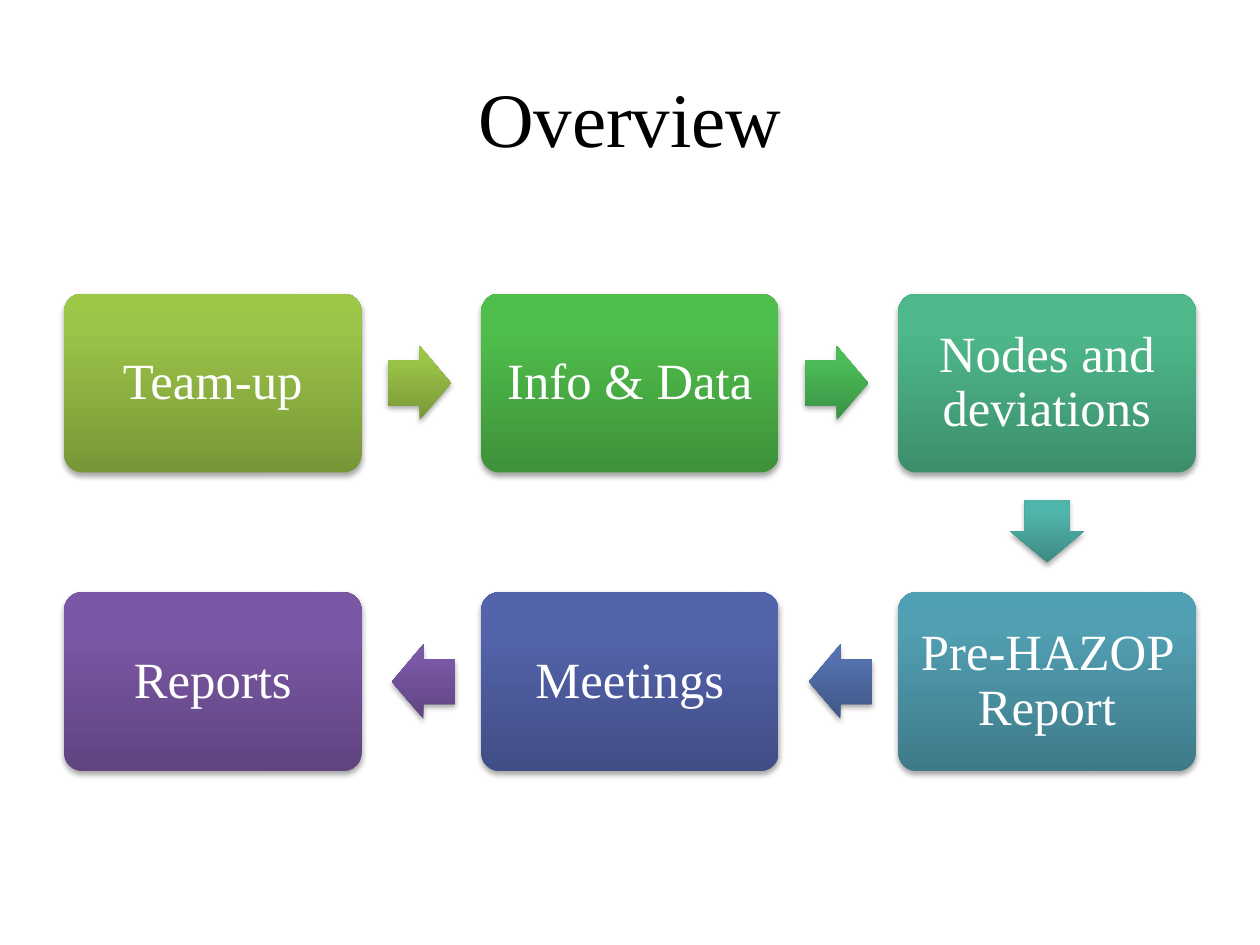
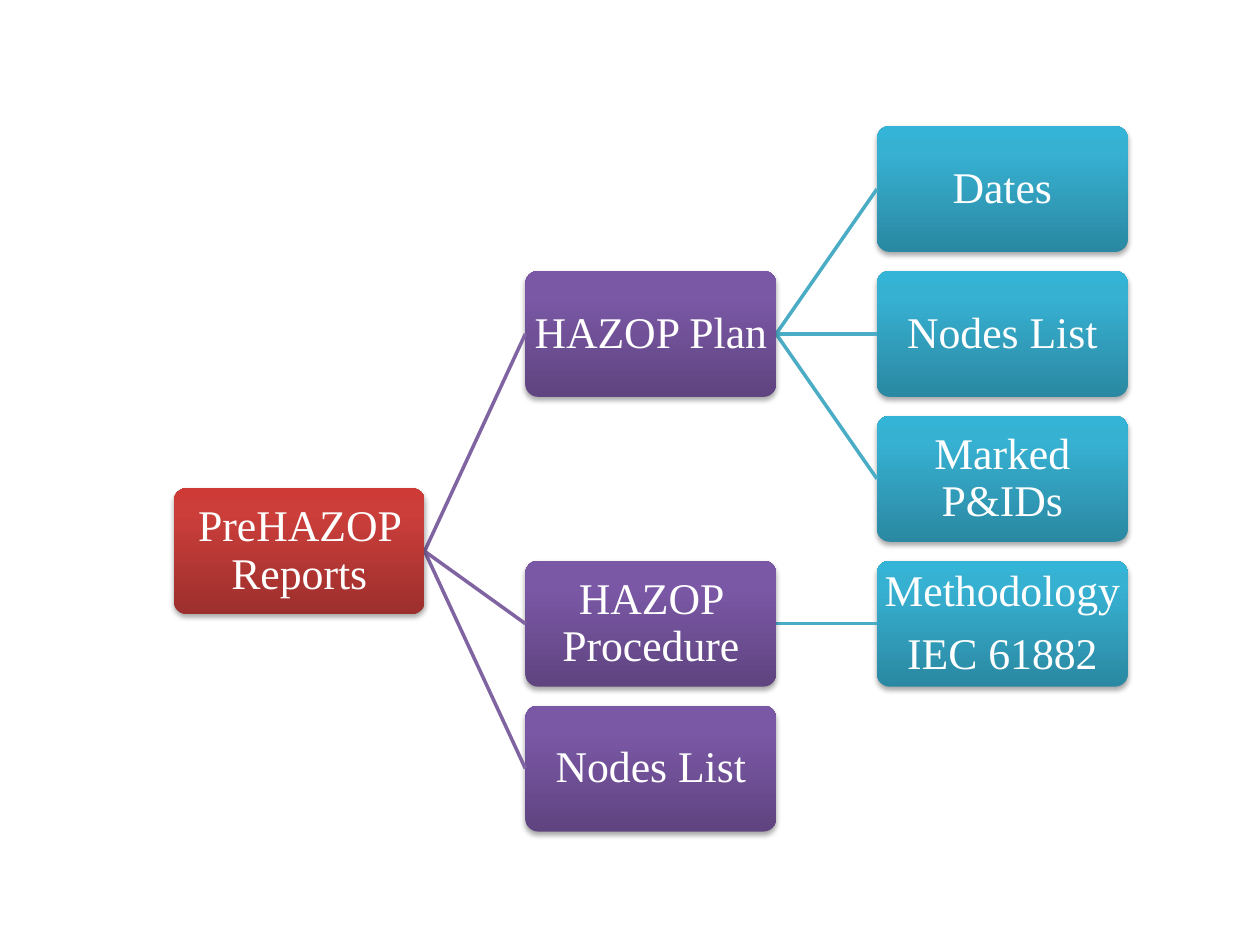
import pptx
import pptx.util
import pptx.dml.color
import pptx.enum.shapes
import pptx.enum.text
import pptx.oxml
import pptx.oxml.ns

# Content: each step is text, column, row, hue
STEPS = [
    ("Team-up", 0, 0, "lime"),
    ("Info & Data", 1, 0, "green"),
    ("Nodes and deviations", 2, 0, "jade"),
    ("Pre-HAZOP Report", 2, 1, "sea"),
    ("Meetings", 1, 1, "blue"),
    ("Reports", 0, 1, "violet"),
]
ARROWS = ["lime", "leaf", "teal", "steel", "violet"]  # between steps

# Each node is text and child nodes
TREE = ("PreHAZOP\u0020Reports", [
    ("HAZOP Plan", [("Dates", []), ("Nodes List", []), ("Marked P&IDs", [])]),
    ("HAZOP Procedure", [("Methodology\nIEC 61882", [])]),
    ("Nodes List", []),
])
LEVELS = ["red", "violet", "cyan"]

# Shared style
FONT = "Times New Roman"
COLORS = {"text": "000000", "label": "FFFFFF", "violet": "8064A2", "cyan": "4BACC6"}
HUES = {  # bottom, near the top, top
    "lime": ("779737", "9BC348", "9DC746"),
    "green": ("3E923A", "50BE4B", "4FC149"),
    "leaf": ("3A9144", "4CBC58", "4ABF57"),
    "jade": ("3C8E6B", "4EB88B", "4CBB8C"),
    "teal": ("3D8B83", "50B5AA", "4EB8AC"),
    "sea": ("3F7A89", "519FB2", "50A0B5"),
    "steel": ("405786", "5471AE", "5271B0"),
    "blue": ("414D85", "5464AC", "5363AF"),
    "violet": ("5F4480", "7B58A6", "7C57A8"),
    "red": ("9C2F2D", "CB3E3A", "CE3B37"),
    "cyan": ("2A88A2", "37B1D2", "34B4D6"),
}
STOPS = (0, 80, 100)

# Grids, in inches
FLOW = {"left": 0.51, "top": 2.33, "dx": 3.31, "dy": 2.37, "w": 2.36, "h": 1.42}
PLAN = {"left": 1.38, "top": 1, "dx": 2.79, "dy": 1.15, "w": 1.99, "h": 1}
ARROW_W, ARROW_H = 0.5, 0.59

INCH = pptx.util.Inches
SHAPE = pptx.enum.shapes.MSO_SHAPE
NS = pptx.oxml.ns.nsdecls("a")


def rgb(name):
    return pptx.dml.color.RGBColor.from_string(COLORS[name])


def write(frame, text, size, color, pad):
    frame.word_wrap = True
    frame.vertical_anchor = pptx.enum.text.MSO_ANCHOR.MIDDLE
    frame.margin_left = frame.margin_right = INCH(pad)
    frame.margin_top = frame.margin_bottom = INCH(pad)
    frame.text = text
    for para in frame.paragraphs:
        para.alignment = pptx.enum.text.PP_ALIGN.CENTER
        para.font.name = FONT
        para.font.size = pptx.util.Pt(size)
        para.font.color.rgb = rgb(color)


def add_solid(slide, kind, x, y, w, h, hue):
    """Shape with a vertical three-stop gradient and a soft shadow."""
    shape = slide.shapes.add_shape(kind, INCH(x), INCH(y), INCH(w), INCH(h))
    shape.line.fill.background()
    shape.fill.gradient()
    shape.fill.gradient_angle = 90
    grad = shape._element.spPr.find(pptx.oxml.ns.qn("a:gradFill"))
    grad.set("rotWithShape", "0")
    stops = grad.find(pptx.oxml.ns.qn("a:gsLst"))
    for stop in list(stops):
        stops.remove(stop)
    for pos, color in zip(STOPS, HUES[hue]):
        stops.append(pptx.oxml.parse_xml(
            f'<a:gs {NS} pos="{pos * 1000}"><a:srgbClr val="{color}"/></a:gs>'))
    shape.shadow.inherit = False
    effects = shape._element.spPr.find(pptx.oxml.ns.qn("a:effectLst"))
    effects.append(pptx.oxml.parse_xml(
        f'<a:outerShdw {NS} blurRad="40000" dist="23000" dir="5400000" rotWithShape="0">'
        '<a:srgbClr val="000000"><a:alpha val="35000"/></a:srgbClr></a:outerShdw>'))
    return shape


def add_box(slide, grid, col, row, text, hue, size, pad):
    x, y = grid["left"] + col * grid["dx"], grid["top"] + row * grid["dy"]
    box = add_solid(slide, SHAPE.ROUNDED_RECTANGLE, x, y, grid["w"], grid["h"], hue)
    box.adjustments[0] = 0.1
    write(box.text_frame, text, size, "label", pad)
    for para in box.text_frame.paragraphs:
        para.line_spacing = 0.9
        para.space_after = pptx.util.Pt(0.35 * size)


def center(grid, col, row):
    return (grid["left"] + col * grid["dx"] + grid["w"] / 2,
            grid["top"] + row * grid["dy"] + grid["h"] / 2)


def add_arrow(slide, start, end, hue):
    """Block arrow midway between two neighbouring steps."""
    (x1, y1), (x2, y2) = center(FLOW, *start), center(FLOW, *end)
    across, down = end[0] - start[0], end[1] - start[1]
    x = (x1 + x2) / 2 - 0.015 * across
    y = (y1 + y2) / 2 - 0.01 * down
    arrow = add_solid(slide, SHAPE.RIGHT_ARROW, x - ARROW_W / 2, y - ARROW_H / 2,
                      ARROW_W, ARROW_H, hue)
    arrow.adjustments[0], arrow.adjustments[1] = 0.6, 0.5
    arrow.rotation = 90 if down else 0 if across > 0 else 180


def add_link(slide, start, end, color):
    line = slide.shapes.add_connector(
        pptx.enum.shapes.MSO_CONNECTOR.STRAIGHT, *map(INCH, (*start, *end)))
    line.line.color.rgb = rgb(color)
    line.line.width = pptx.util.Pt(2)
    line._element.spPr.append(pptx.oxml.parse_xml(f"<a:effectLst {NS}/>"))


def add_node(slide, node, level, first):
    """Draw a branch from row `first`; return its row and the next free row."""
    text, kids = node
    rows, free = [], first
    for kid in kids:
        row, free = add_node(slide, kid, level + 1, free)
        rows.append(row)
    if rows:
        row = (rows[0] + rows[-1]) / 2
    else:
        row, free = first, first + 1
    x, y = center(PLAN, level, row)
    for below in rows:
        end_x, end_y = center(PLAN, level + 1, below)
        add_link(slide, (x + PLAN["w"] / 2, y), (end_x - PLAN["w"] / 2, end_y),
                 LEVELS[level + 1])
    add_box(slide, PLAN, level, row, text, LEVELS[level], 25, 0.02)
    return row, free


def main():
    deck = pptx.Presentation()
    deck.slide_width, deck.slide_height = INCH(10), INCH(7.5)
    blank = deck.slide_layouts[6]

    # Overview: steps in a loop
    slide = deck.slides.add_slide(blank)
    title = slide.shapes.add_textbox(INCH(0.5), INCH(0.3), INCH(9), INCH(1.25))
    write(title.text_frame, "Overview", 44, "text", 0.05)
    for text, col, row, hue in STEPS:
        add_box(slide, FLOW, col, row, text, hue, 29, 0.12)
    for start, end, hue in zip(STEPS, STEPS[1:], ARROWS):
        add_arrow(slide, start[1:3], end[1:3], hue)

    # Report tree
    slide = deck.slides.add_slide(blank)
    add_node(slide, TREE, 0, 0)

    deck.save("out.pptx")


if __name__ == "__main__":
    main()
